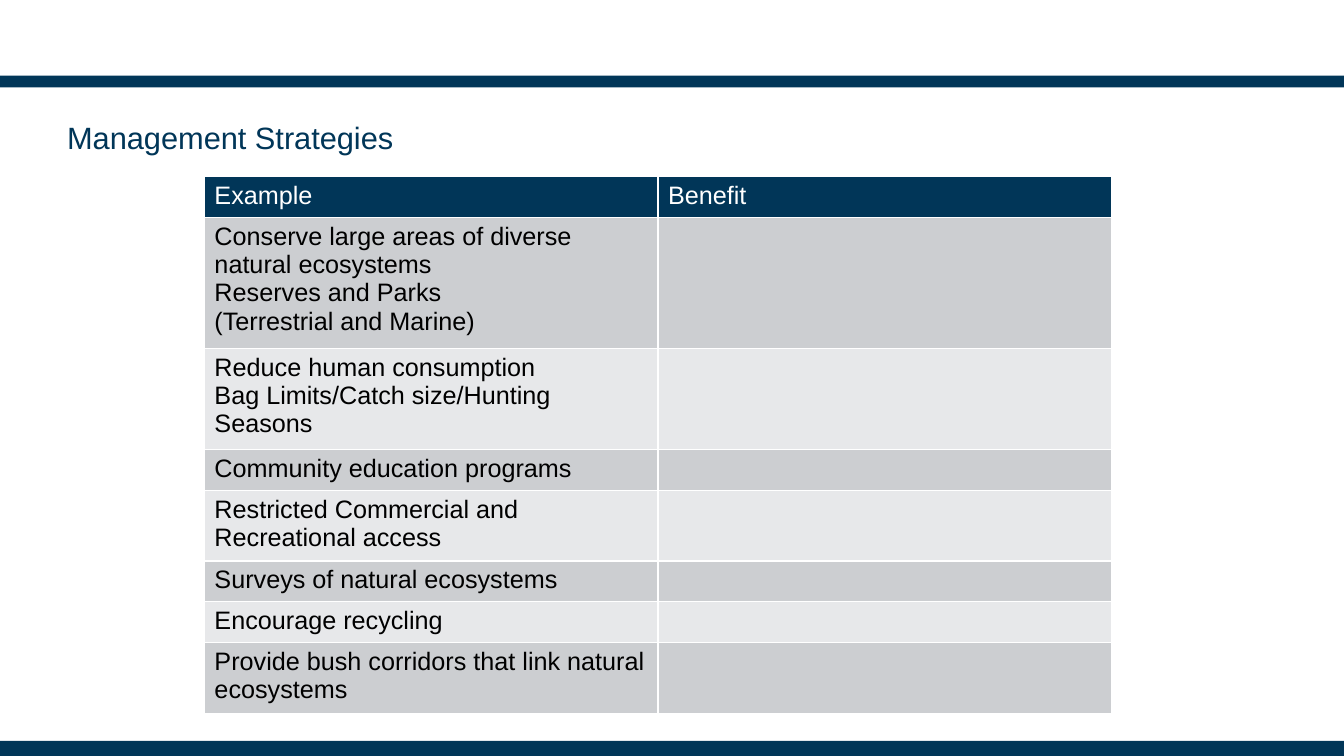
from dataclasses import dataclass

from lxml import etree
from pptx import Presentation
from pptx import util as u
from pptx.dml import color
from pptx.enum import shapes, text
from pptx.oxml import ns


@dataclass(frozen=True)
class Theme:
    navy: str = "013658"
    white: str = "FFFFFF"
    black: str = "000000"
    dark: str = "CCCED1"
    light: str = "E7E8EA"
    face: str = "Arial"
    title: int = 22
    body: int = 18


def paint(fill, hue):
    fill.solid()
    fill.fore_color.rgb = color.RGBColor.from_string(hue)


def write(frame, lines, *, face, size, hue, lead=None):
    """Fill a text frame with one paragraph per line."""
    for i, line in enumerate(lines):
        para = frame.add_paragraph() if i else frame.paragraphs[0]
        para.text = line
        para.font.name = face
        para.font.size = u.Pt(size)
        para.font.color.rgb = color.RGBColor.from_string(hue)
        if lead:
            para.line_spacing = u.Pt(lead)


def edge(cell, hue, width):
    """Draw all four borders of a cell; they must precede its fill."""
    props = cell._tc.get_or_add_tcPr()
    for i, side in enumerate(("lnL", "lnR", "lnT", "lnB")):
        line = etree.Element(ns.qn(f"a:{side}"), w=str(u.Pt(width)))
        solid = etree.SubElement(line, ns.qn("a:solidFill"))
        etree.SubElement(solid, ns.qn("a:srgbClr"), val=hue)
        props.insert(i, line)


class Deck:
    def __init__(self, theme, slide):
        self.theme = theme
        self.slide = slide

    def bar(self, x, y, w, h):
        box = self.slide.shapes.add_shape(
            shapes.MSO_SHAPE.RECTANGLE, u.Pt(x), u.Pt(y), u.Pt(w), u.Pt(h))
        box.shadow.inherit = False
        paint(box.fill, self.theme.navy)
        box.line.fill.background()

    def title(self, words, x, y, w, h):
        frame = self.slide.shapes.add_textbox(
            u.Pt(x), u.Pt(y), u.Pt(w), u.Pt(h)).text_frame
        frame.word_wrap = True
        frame.vertical_anchor = text.MSO_ANCHOR.MIDDLE
        frame.margin_left = frame.margin_right = 0
        frame.margin_top = frame.margin_bottom = 0
        t = self.theme
        write(frame, [words], face=t.face, size=t.title, hue=t.navy, lead=24)

    def table(self, rows, x, y, w, high):
        t = self.theme
        grid = self.slide.shapes.add_table(
            len(rows), len(rows[0]), u.Pt(x), u.Pt(y), u.Pt(w),
            u.Pt(high * len(rows))).table
        for r, row in enumerate(rows):
            back = (t.dark if r % 2 else t.light) if r else t.navy
            hue = t.black if r else t.white
            for c, lines in enumerate(row):
                cell = grid.cell(r, c)
                paint(cell.fill, back)
                edge(cell, t.white, 1)
                write(cell.text_frame, lines, face=t.face, size=t.body, hue=hue)


def main():
    show = Presentation()
    show.slide_width, show.slide_height = u.Pt(960), u.Pt(540)
    deck = Deck(Theme(), show.slides.add_slide(show.slide_layouts[6]))

    # Bands above and below the content
    deck.bar(0, 54, 960, 8.4)
    deck.bar(0, 529.2, 960, 10.8)

    # Heading
    deck.title("Management Strategies", 48, 72, 864, 54)

    # Strategies, with the benefits left open; rows grow with their text
    plans = [
        ["Conserve large areas of diverse natural ecosystems",
         "Reserves and Parks", "(Terrestrial and Marine)"],
        ["Reduce human consumption", "Bag Limits/Catch size/Hunting Seasons"],
        ["Community education programs"],
        ["Restricted Commercial and Recreational access"],
        ["Surveys of natural ecosystems"],
        ["Encourage recycling"],
        ["Provide bush corridors that link natural ecosystems"],
    ]
    rows = [(["Example"], ["Benefit"])] + [(plan, [""]) for plan in plans]
    deck.table(rows, 146, 126.2, 648, 29.2)

    show.save("out.pptx")


if __name__ == "__main__":
    main()
